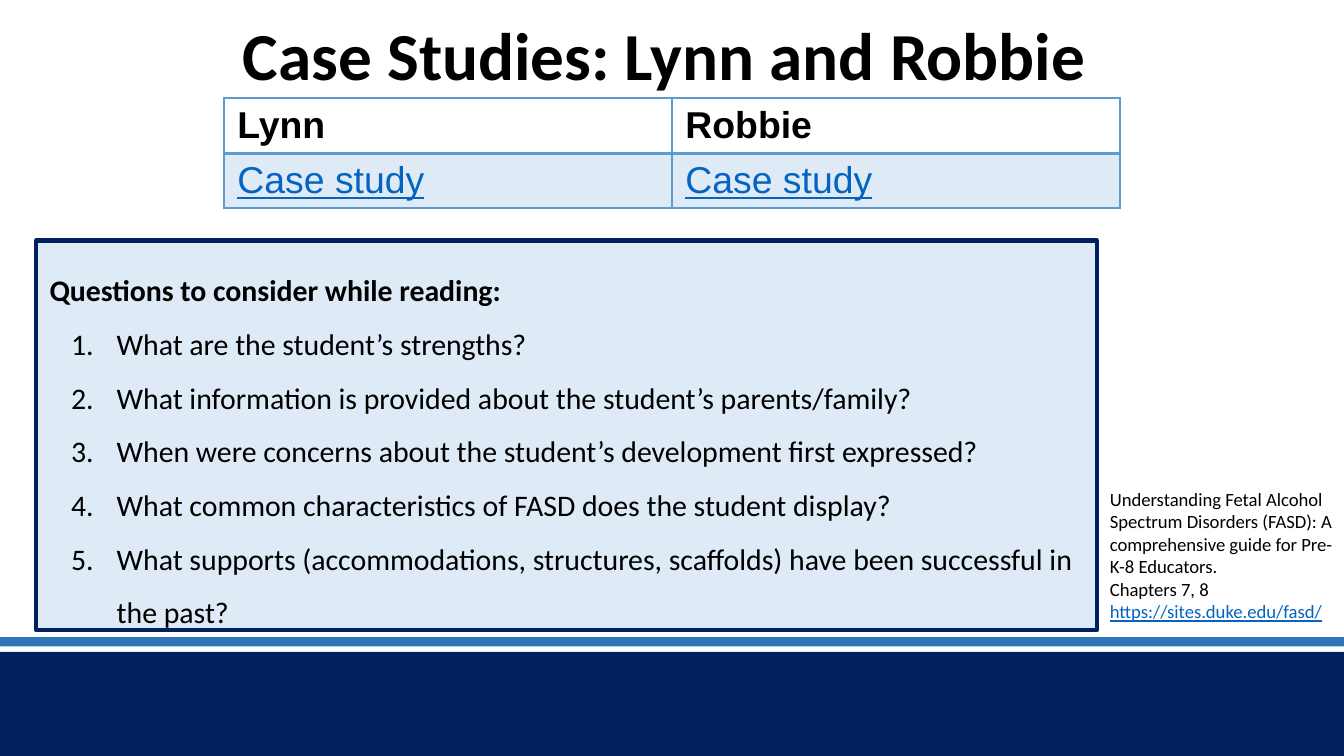
import pptx
import pptx.util
import pptx.dml.color
import pptx.enum.shapes
import pptx.enum.text
from lxml import etree

Inches, Pt = pptx.util.Inches, pptx.util.Pt
RGBColor = pptx.dml.color.RGBColor
AUTO_SIZE = pptx.enum.text.MSO_AUTO_SIZE
ALIGN = pptx.enum.text.PP_ALIGN

BLACK = RGBColor(0x00, 0x00, 0x00)
NAVY = RGBColor(0x00, 0x20, 0x60)
BAND_BLUE = RGBColor(0x2E, 0x75, 0xB6)
GRID_BLUE = RGBColor(0x5B, 0x9B, 0xD5)
PALE_BLUE = RGBColor(0xDE, 0xEB, 0xF7)
LINK_BLUE = RGBColor(0x05, 0x63, 0xC1)

TITLE = "Case Studies: Lynn and Robbie "
CASES = [("Lynn", "Robbie"), ("Case study", "Case study")]
PROMPT = "Questions to consider while reading:"
QUESTIONS = [
    "What are the student’s strengths?",
    "What information is provided about the student’s parents/family?",
    "When were concerns about the student’s development first expressed?",
    "What common characteristics of FASD does the student display?",
    "What supports (accommodations, structures, scaffolds) have been successful in the past?",
]
REFERENCE = [
    "Understanding Fetal Alcohol Spectrum Disorders (FASD): "
    "A comprehensive guide for Pre-K-8 Educators.",
    "Chapters 7, 8",
]
REFERENCE_URL = "https://sites.duke.edu/fasd/"

WIDTH = 10
HEIGHT = WIDTH * 9 / 16
FOOTER_TOP, BAND_TOP, BAND_HEIGHT = 4.85, 4.74, 0.07
TABLE_WIDTH, TABLE_TOP, ROW_HEIGHT = WIDTH * 2 / 3, 0.73, 0.41
PANEL_LEFT, PANEL_TOP, PANEL_WIDTH, PANEL_BOTTOM = 0.27, 1.79, 7.89, 4.69
NOTE_TOP, NOTE_WIDTH = 3.58, 1.94


def write(frame, text, size=16, font="Calibri", color=BLACK, bold=False,
          underline=False, align=ALIGN.LEFT, spacing=None, numbered=False):
    """Fill the frame's empty first paragraph, or append a new one."""
    first = frame.paragraphs[0]
    paragraph = frame.add_paragraph() if first.runs else first
    paragraph.alignment = align
    paragraph.line_spacing = spacing
    if numbered:
        properties = paragraph._p.get_or_add_pPr()
        properties.set("marL", str(Inches(0.5)))
        properties.set("indent", str(Inches(-0.34)))
        number = etree.SubElement(properties, pptx.oxml.ns.qn("a:buAutoNum"))
        number.set("type", "arabicPeriod")
    run = paragraph.add_run()
    run.text = text
    run.font.size = Pt(size)
    run.font.name = font
    run.font.color.rgb = color
    run.font.bold = bold
    run.font.underline = underline


def add_box(slide, left, top, width, height, fill, line=None):
    box = slide.shapes.add_shape(
        pptx.enum.shapes.MSO_SHAPE.RECTANGLE,
        Inches(left), Inches(top), Inches(width), Inches(height))
    box.shadow.inherit = False
    box.fill.solid()
    box.fill.fore_color.rgb = fill
    if line is None:
        box.line.fill.background()
    else:
        box.line.color.rgb = line
        box.line.width = Pt(2.25)
    return box


def add_text_frame(slide, left, top, width, height):
    frame = slide.shapes.add_textbox(
        Inches(left), Inches(top), Inches(width), Inches(height)).text_frame
    frame.word_wrap = True
    return frame


def set_borders(cell, **widths):
    """Draw cell edges; they must precede the fill in the cell properties."""
    properties = cell._tc.get_or_add_tcPr()
    for position, (edge, width) in enumerate(widths.items()):
        line = etree.Element(pptx.oxml.ns.qn("a:" + edge), w=str(Pt(width)))
        fill = etree.SubElement(line, pptx.oxml.ns.qn("a:solidFill"))
        etree.SubElement(fill, pptx.oxml.ns.qn("a:srgbClr"), val=str(GRID_BLUE))
        properties.insert(position, line)


def add_cases(slide):
    table = slide.shapes.add_table(
        len(CASES), len(CASES[0]),
        Inches((WIDTH - TABLE_WIDTH) / 2), Inches(TABLE_TOP),
        Inches(TABLE_WIDTH), Inches(ROW_HEIGHT * len(CASES))).table
    for row, names in enumerate(CASES):
        header = row == 0
        for column, name in enumerate(names):
            cell = table.cell(row, column)
            cell.margin_top, cell.margin_bottom = Inches(0.05), Inches(0.02)
            if header:
                cell.fill.background()
            else:
                cell.fill.solid()
                cell.fill.fore_color.rgb = PALE_BLUE
            write(cell.text_frame, name, size=20, font="Arial", bold=header,
                  underline=not header, color=BLACK if header else LINK_BLUE)
            set_borders(cell, lnL=1, lnR=1, lnT=1 if header else 2,
                        lnB=2 if header else 1)


def add_questions(slide):
    panel = add_box(slide, PANEL_LEFT, PANEL_TOP, PANEL_WIDTH,
                    PANEL_BOTTOM - PANEL_TOP, PALE_BLUE, NAVY)
    frame = panel.text_frame
    frame.word_wrap = True
    frame.auto_size = AUTO_SIZE.NONE
    frame.vertical_anchor = pptx.enum.text.MSO_ANCHOR.TOP
    frame.margin_left = frame.margin_right = Inches(0.1)
    frame.margin_top = frame.margin_bottom = Inches(0.1)
    write(frame, PROMPT, bold=True, spacing=1.5)
    for question in QUESTIONS:
        write(frame, question, spacing=1.5, numbered=True)


def add_reference(slide):
    frame = add_text_frame(slide, PANEL_LEFT + PANEL_WIDTH, NOTE_TOP,
                           NOTE_WIDTH, PANEL_BOTTOM - NOTE_TOP)
    frame.auto_size = AUTO_SIZE.SHAPE_TO_FIT_TEXT
    for line in REFERENCE:
        write(frame, line, size=10)
    write(frame, REFERENCE_URL, size=10, color=LINK_BLUE, underline=True)


def main():
    deck = pptx.Presentation()
    deck.slide_width, deck.slide_height = Inches(WIDTH), Inches(HEIGHT)
    slide = deck.slides.add_slide(deck.slide_layouts[6])
    add_box(slide, 0, FOOTER_TOP, WIDTH, HEIGHT - FOOTER_TOP, NAVY)
    add_box(slide, 0, BAND_TOP, WIDTH, BAND_HEIGHT, BAND_BLUE)
    title = add_text_frame(slide, 0.69, 0.12, WIDTH - 2 * 0.69, 1.09)
    write(title, TITLE, size=36, bold=True, align=ALIGN.CENTER, spacing=0.9)
    add_questions(slide)
    add_cases(slide)
    add_reference(slide)
    deck.save("out.pptx")


if __name__ == "__main__":
    main()
